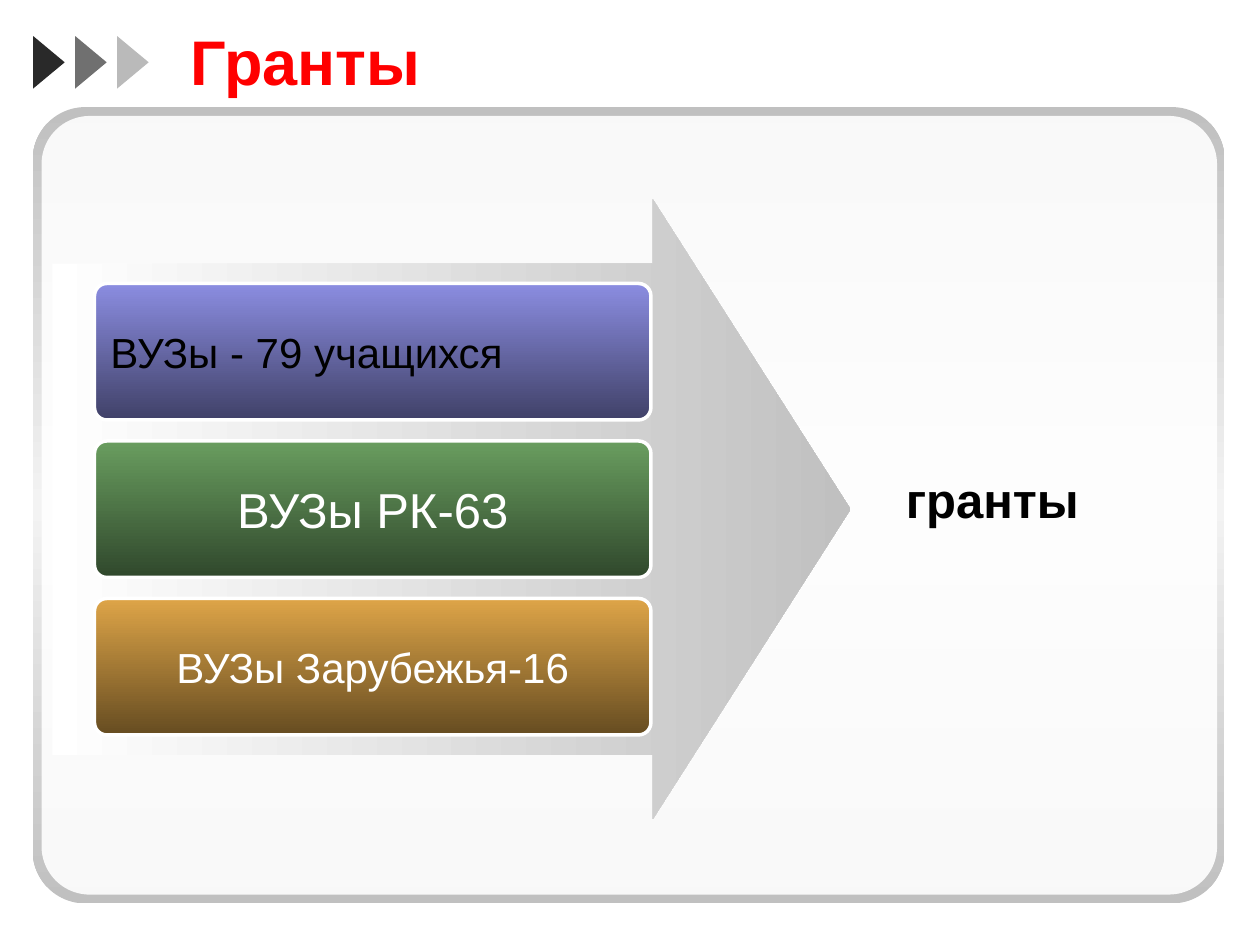
from lxml.etree import SubElement
from pptx import Presentation
from pptx.dml.color import RGBColor
from pptx.enum.shapes import MSO_SHAPE as Preset
from pptx.enum.text import MSO_ANCHOR as Anchor, PP_ALIGN as Align
from pptx.oxml.ns import qn
from pptx.util import Inches, Pt

COLORS = {
    "white": "FFFFFF", "black": "000000", "red": "FF0000",
    "silver": "C0C0C0", "mist": "F3F3F3", "shade": "808080",
    "violet": "8B8DE1", "violet_dark": "404168",
    "green": "699D5F", "green_dark": "30482C",
    "amber": "DEA548", "amber_dark": "664C21",
}
COLUMNS, ROWS = 120, 90


class Painter:
    """Holds the style and the current slide, placing elements on a grid."""

    font = "Arial"

    def __init__(self, deck):
        self.page = deck.slides.add_slide(deck.slide_layouts[6])
        self.column = deck.slide_width / COLUMNS
        self.row = deck.slide_height / ROWS

    def place(self, left, top, width, height):
        return [round(value * unit) for value, unit in
                zip((left, top, width, height), (self.column, self.row) * 2)]

    def shape(self, preset, area, adjust=()):
        box = self.page.shapes.add_shape(preset, *self.place(*area))
        box.shadow.inherit = False
        box.fill.background()
        box.line.fill.background()
        for index, value in enumerate(adjust):
            box.adjustments[index] = value
        return box

    def solid(self, box, color, opacity):
        box.fill.solid()
        box.fill.fore_color.rgb = RGBColor.from_string(COLORS[color])
        tint = box.fill._xPr.find(qn("a:solidFill"))[0]
        SubElement(tint, qn("a:alpha"), val=str(opacity * 1000))

    def gradient(self, box, names, angle):
        box.fill.gradient()
        box.fill.gradient_angle = angle
        stops = box.fill._xPr.find(qn("a:gradFill")).find(qn("a:gsLst"))
        for stop in list(stops):
            stops.remove(stop)
        for index, name in enumerate(names):
            position = 100000 * index // (len(names) - 1)
            stop = SubElement(stops, qn("a:gs"), pos=str(position))
            SubElement(stop, qn("a:srgbClr"), val=COLORS[name])

    def text(self, box, words, size, color, align=Align.CENTER, bold=False, wrap=True):
        frame = box.text_frame
        frame.text = words
        frame.word_wrap = wrap
        frame.vertical_anchor = Anchor.MIDDLE
        para = frame.paragraphs[0]
        para.alignment = align
        span = para.runs[0]
        span.font.name = self.font
        span.font.size = Pt(size)
        span.font.bold = bold
        span.font.color.rgb = RGBColor.from_string(COLORS[color])
        return span

    def title(self, words, area):
        box = self.page.shapes.add_textbox(*self.place(*area))
        span = self.text(box, words, 36, "red", Align.LEFT, bold=True)
        properties = span.font._element
        effects = SubElement(properties, qn("a:effectLst"))
        properties.find(qn("a:solidFill")).addnext(effects)
        shadow = SubElement(effects, qn("a:outerShdw"), dist="35921", dir="2700000")
        SubElement(shadow, qn("a:srgbClr"), val=COLORS["shade"])

    def panel(self):
        frame = self.shape(Preset.ROUNDED_RECTANGLE, (3.12, 10.2, 113.52, 75.84), [0.066])
        self.gradient(frame, ["silver", "mist", "silver"], 270)
        inner = self.shape(Preset.ROUNDED_RECTANGLE, (3.96, 11.04, 111.96, 74.16), [0.062])
        self.solid(inner, "white", 90)

    def marker(self, index, opacity):
        triangle = self.shape(Preset.ISOSCELES_TRIANGLE, (2.16 + 4 * index, 4.44, 5, 3))
        triangle.rotation = 90
        self.solid(triangle, "black", opacity)

    def arrow(self, area):
        box = self.shape(Preset.RIGHT_ARROW, area, [0.793, 0.319])
        self.gradient(box, ["white", "silver"], 0)

    def bar(self, index, words, hue, size, color, align):
        box = self.shape(Preset.ROUNDED_RECTANGLE, (9, 27 + 15 * index, 53, 13), [0.091])
        self.gradient(box, [hue, f"{hue}_dark"], 270)
        box.line.color.rgb = RGBColor.from_string(COLORS["white"])
        box.line.width = Pt(2)
        self.text(box, words, size, color, align, wrap=False)

    def label(self, words, area):
        box = self.shape(Preset.ROUNDED_RECTANGLE, area, [0.091])
        self.text(box, words, 28, "black", bold=True)


def main():
    deck = Presentation()
    deck.slide_width, deck.slide_height = Inches(10), Inches(7.5)
    painter = Painter(deck)
    painter.panel()
    for index, opacity in enumerate((84, 56, 27)):
        painter.marker(index, opacity)
    painter.title("Гранты", (17, 2, 100, 7.5))
    painter.arrow((5, 19, 76, 59))
    bars = [
        ("ВУЗы - 79 учащихся", "violet", 24, "black", Align.LEFT),
        ("ВУЗы РК-63", "green", 28, "white", Align.CENTER),
        ("ВУЗы Зарубежья-16", "amber", 24, "white", Align.CENTER),
    ]
    for index, bar in enumerate(bars):
        painter.bar(index, *bar)
    painter.label("гранты", (78, 39, 33, 17))
    deck.save("out.pptx")


if __name__ == "__main__":
    main()
